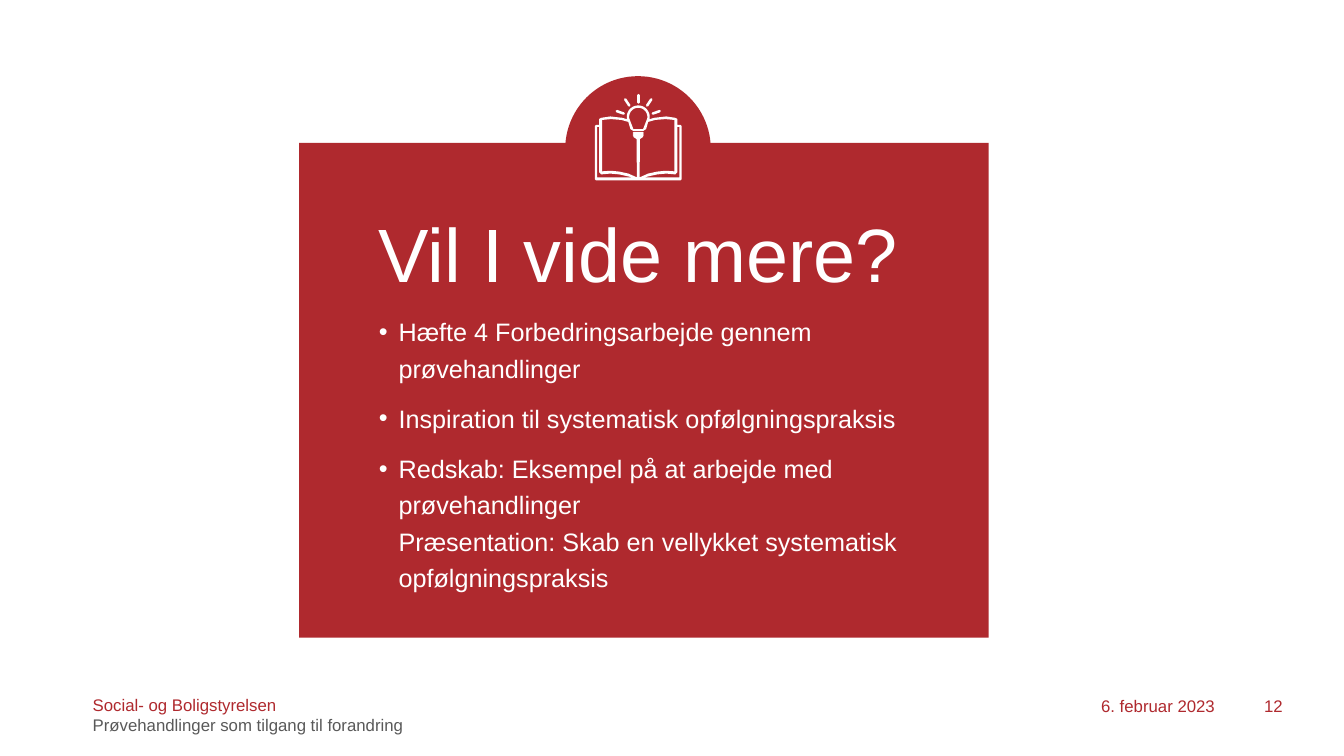
from math import cos, radians, sin

from lxml import etree
from pptx import Presentation
from pptx.dml.color import RGBColor
from pptx.enum.shapes import MSO_CONNECTOR, MSO_SHAPE
from pptx.enum.text import PP_ALIGN
from pptx.oxml.ns import qn
from pptx.util import Pt

RECT, OVAL = MSO_SHAPE.RECTANGLE, MSO_SHAPE.OVAL
LINE = MSO_CONNECTOR.STRAIGHT
LEFT, RIGHT = PP_ALIGN.LEFT, PP_ALIGN.RIGHT
RED, WHITE, GREY = "AF292E", "FFFFFF", "595959"

TITLE = "Vil I vide mere?"
ITEMS = [
    "Hæfte 4 Forbedringsarbejde gennem prøvehandlinger",
    "Inspiration til systematisk opfølgningspraksis",
    "Redskab: Eksempel på at arbejde med prøvehandlinger\n"
    "Præsentation: Skab en vellykket systematisk opfølgningspraksis",
]
FOOTER = ["Social- og Boligstyrelsen", "Prøvehandlinger som tilgang til forandring"]
DATE, PAGE = "6. februar 2023", "12"

# Icon: x is measured from the spine of the book, y from the top of the slide.
# Each list holds the right half of an outline, from top to bottom or round.
SPINE = 455.9
BULB = 83.5
COVER = [(8, 85.2), (11.3, 84.2), (20, 83.2), (26.6, 84.2), (27.9, 85),
         (27.9, 89.3), (30.2, 89.3), (31, 90), (31, 128.1), (30.2, 128.9)]
LEAF = [(0, 97.2), (3.4, 97.2), (3.4, 97.9), (1.2, 99.4), (1, 126.7),
        (7, 124), (13.5, 122.6), (19.5, 122), (25.8, 122.4), (25.8, 85.7),
        (19.5, 85.1), (12.1, 85.7), (7.1, 87.1), (5.6, 92.2), (3.5, 93.6),
        (0, 93.6)]
EDGE = [(29.4, 126.7), (4.2, 126.7), (13.5, 124.6), (20, 124), (26.5, 124.6),
        (27.9, 123.1), (27.9, 90.7), (29.4, 90.7)]
NECK = [(5, 88.3), (3.5, 92.2)]
RAYS = [((-9.3, 71), (-6.4, 75.4)), ((-15.3, 79.4), (-10.4, 81.1))]
TOP_RAY = ((0, 68), (0, 73.2))
COLLARS = [95, 96.5]


def rgb(code):
    return RGBColor.from_string(code)


def paint(shape, color):
    shape.shadow.inherit = False
    shape.fill.solid()
    shape.fill.fore_color.rgb = rgb(color)
    shape.line.fill.background()


def block(kind, *box):
    paint(slide.shapes.add_shape(kind, *map(Pt, box)), RED)


def text(lines, box, size, color, align=LEFT, inset=(0, 0)):
    """Add a text box; inset is the left and bottom margin."""
    frame = slide.shapes.add_textbox(*map(Pt, box)).text_frame
    frame.word_wrap = True
    frame.margin_left, frame.margin_bottom = map(Pt, inset)
    frame.margin_top = frame.margin_right = 0
    for i, line in enumerate(lines):
        par = frame.add_paragraph() if i else frame.paragraphs[0]
        par.text = line
        par.alignment = align
        par.font.name = "Arial"
        par.font.size = Pt(size)
        par.font.color.rgb = rgb(color)
    return frame.paragraphs


def bullet(par):
    props = par._p.get_or_add_pPr()
    props.set("marL", str(Pt(14)))
    props.set("indent", str(Pt(-14)))
    base = props.find(qn("a:defRPr"))
    base.addprevious(etree.Element(qn("a:buFont"), typeface="Arial"))
    base.addprevious(etree.Element(qn("a:buChar"), char="•"))


def flip(points):
    return [(-x, y) for x, y in points]


def whole(half):
    """Close a right half with its mirror image."""
    return half + flip(half)[::-1]


def dome(radius):
    """Right half of the round top of the bulb."""
    return [(radius * sin(radians(a)), BULB - radius * cos(radians(a)))
            for a in range(0, 101, 10)]


def cutout(rings):
    """Draw one white shape; rings inside the first one are holes."""
    maker = None
    for ring in rings:
        first, *rest = [(Pt(SPINE + x), Pt(y)) for x, y in ring]
        if maker:
            maker.move_to(*first)
        else:
            maker = slide.shapes.build_freeform(*first)
        maker.add_line_segments(rest, close=True)
    paint(maker.convert_to_shape(), WHITE)


def stroke(start, end, width=1.8):
    ends = [Pt(v) for x, y in (start, end) for v in (SPINE + x, y)]
    line = slide.shapes.add_connector(LINE, *ends)
    etree.SubElement(line._element.spPr, qn("a:effectLst"))
    line.line.color.rgb = rgb(WHITE)
    line.line.width = Pt(width)
    line.line._get_or_add_ln().set("cap", "rnd")


deck = Presentation()
deck.slide_width, deck.slide_height = Pt(960), Pt(540)
slide = deck.slides.add_slide(deck.slide_layouts[6])

block(RECT, 213.6, 102, 492.7, 353.5)
block(OVAL, 403.7, 54.4, 104, 104)

body = text(ITEMS, (270.7, 221.8, 406, 237.6), 18, WHITE)
for par in body:
    par.line_spacing = 1.2
    par.space_before = Pt(10)
    bullet(par)
head = text([TITLE], (270.4, 154.8, 421, 67), 54, WHITE)[0]
head.line_spacing = 0.9
head.space_before = Pt(10)

cutout([whole(dome(8.2) + COVER), whole(LEAF), EDGE, flip(EDGE),
        whole(dome(6.5) + NECK)])
for ray in RAYS:
    stroke(*ray)
    stroke(*flip(ray))
stroke(*TOP_RAY)
for y in COLLARS:
    stroke((-3.4, y), (3.4, y), 1.3)

text([PAGE], (867.2, 496.8, 49, 28.8), 12, RED, RIGHT, (7.2, 3.6))
text([DATE], (728.9, 496.8, 139, 28.8), 12, RED, RIGHT, (7.2, 3.6))
foot = text(FOOTER, (66.2, 496.1, 314, 43), 12, RED)
foot[1].font.color.rgb = rgb(GREY)

deck.save("out.pptx")
